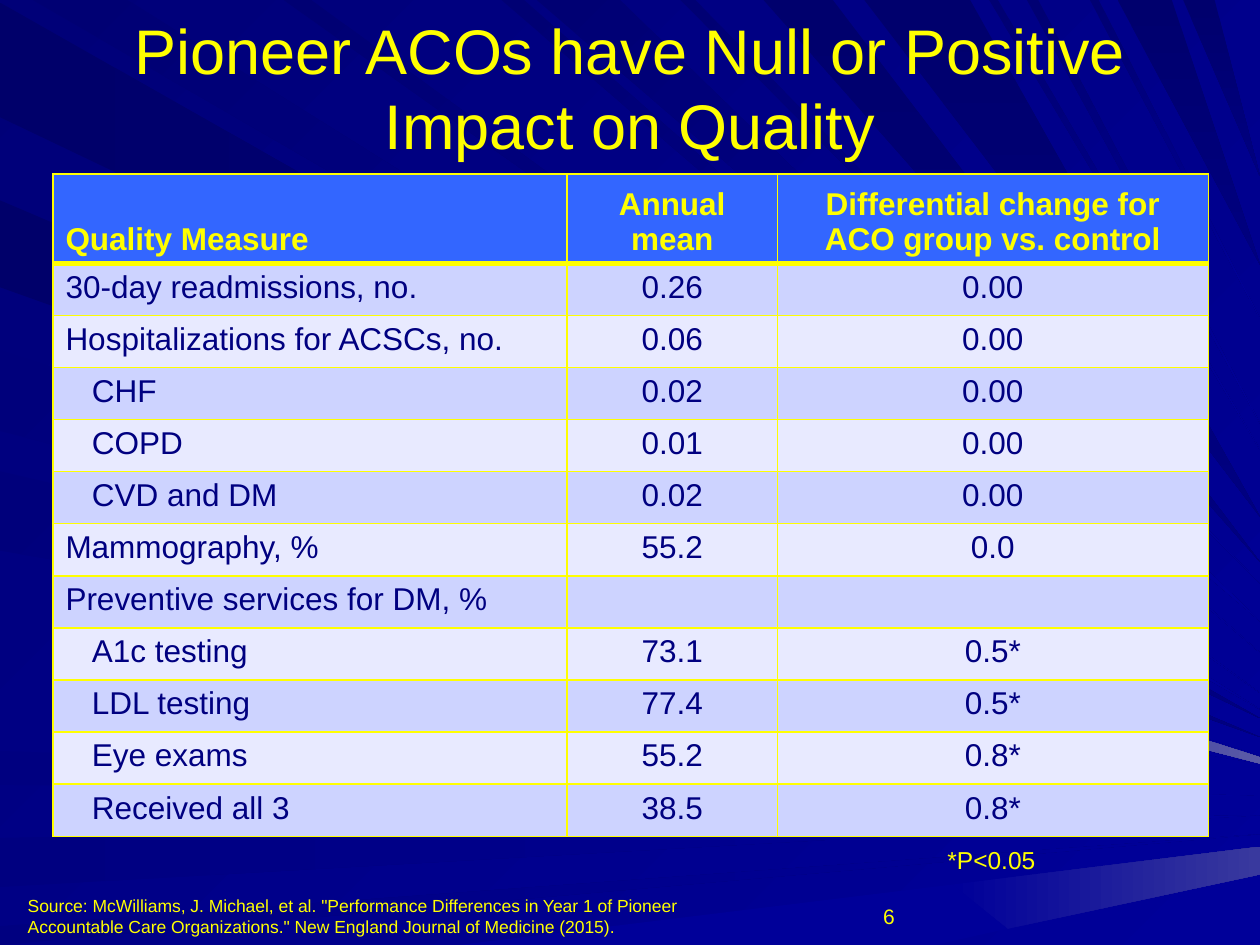
"""Build the slide on Pioneer ACO quality results."""
from lxml import etree
from pptx import Presentation
from pptx.dml.color import RGBColor
from pptx.enum import text
from pptx.oxml import ns
from pptx.util import Inches, Pt

YELLOW, NAVY, HEADER = "FFFF00", "000080", "3366FF"
BANDS = "CDD3FF", "E8EAFF"
WIDTH, HEIGHT = 10, 7.5
LEFT, CENTER, RIGHT = text.PP_ALIGN.LEFT, text.PP_ALIGN.CENTER, text.PP_ALIGN.RIGHT
TOP, MIDDLE, BOTTOM = text.MSO_ANCHOR.TOP, text.MSO_ANCHOR.MIDDLE, text.MSO_ANCHOR.BOTTOM

TITLE = "Pioneer ACOs have Null or Positive Impact on Quality"
SOURCE = ('Source: McWilliams, J. Michael, et al. "Performance Differences in Year 1 of Pioneer '
          'Accountable Care Organizations."\u00a0New England Journal of Medicine\u00a0(2015).')
HEADINGS = "Quality Measure", "Annual mean", "Differential change for ACO group vs. control"
MEASURES = [
    (0, "30-day readmissions, no.", "0.26", "0.00"),
    (0, "Hospitalizations for ACSCs, no.", "0.06", "0.00"),
    (1, "CHF", "0.02", "0.00"),
    (1, "COPD", "0.01", "0.00"),
    (1, "CVD and DM", "0.02", "0.00"),
    (0, "Mammography, %", "55.2", "0.0"),
    (0, "Preventive services for DM, %", "", ""),
    (1, "A1c testing", "73.1", "0.5*"),
    (1, "LDL testing", "77.4", "0.5*"),
    (1, "Eye exams", "55.2", "0.8*"),
    (1, "Received all 3", "38.5", "0.8*"),
]
COLUMNS = 4.08, 1.67, 3.42
TABLE_LEFT, TABLE_TOP, TABLE_HEIGHT, HEAD_HEIGHT = 0.42, 1.38, 5.26, 0.71

RAYS = [
    ("left", "00006A", "000080", 0, [(0.02, 0.93, 5.7), (1.59, 2.28, 5.85)]),
    ("left", "00007B", "000099", 45, [(2.78, 3.42, 6), (3.74, 4.37, 6.06)]),
    ("left", "000080", "000099", 0, [(5.96, 6.23, 6.32), (6.65, 7.04, 6.47), (7.35, 7.5, 6.62)]),
    ("top", "000073", "000099", 45, [(0.26, 1.01, 5.63), (2.25, 2.47, 5.5), (3.98, 4.16, 5.18),
                                     (4.26, 4.92, 4.93), (5.4, 5.52, 4.63), (7.85, 7.92, 3.57),
                                     (8.15, 8.24, 3.36), (8.65, 8.72, 2.53)]),
    ("top", "00006D", "000080", 90, [(6.06, 6.61, 4.46), (6.86, 7.7, 4.1),
                                     (8.87, 9.3, 2.1), (9.39, 9.64, 1.4)]),
]
GLOWS = [
    ("000099", "000099", [(3.64, 7.5), (7.56, 7.02), (8, 7.37), (7.42, 7.5)]),
    ("000099", "39399E", [(7.56, 7.02), (10, 6.72), (10, 6.94), (8, 7.37)]),
    ("000099", "5A5AA6", [(6.37, 4.85), (10, 6.01), (10, 6.06), (6.33, 5.11)]),
]


def rgb(value):
    return RGBColor.from_string(value)


def paint(fill, start, end, angle=0):
    if start == end:
        fill.solid()
        fill.fore_color.rgb = rgb(start)
        return
    fill.gradient()
    fill.gradient_angle = (360 - angle) % 360
    for stop, color in zip(fill.gradient_stops, (start, end)):
        stop.color.rgb = rgb(color)


def style(p, size, color=YELLOW, align=LEFT, bold=False):
    p.alignment = align
    p.font.name, p.font.size, p.font.bold = "Arial", Pt(size), bold
    p.font.color.rgb = rgb(color)


def add_outline(s, points, start, end, angle=0):
    corners = [(Inches(x), Inches(y)) for x, y in points]
    builder = s.shapes.build_freeform(*corners[0], scale=1.0)
    builder.add_line_segments(corners[1:], close=True)
    sp = builder.convert_to_shape()
    sp.shadow.inherit = False
    sp.line.fill.background()
    paint(sp.fill, start, end, angle)


def add_backdrop(s):
    paint(s.background.fill, "000078", "000099", 45)
    for edge, start, end, angle, spans in RAYS:
        for near, far, tip in spans:
            base = [(0, near), (0, far)] if edge == "left" else [(near, 0), (far, 0)]
            add_outline(s, base + [(WIDTH, tip)], start, end, angle)
    for start, end, points in GLOWS:
        add_outline(s, points, start, end)


def add_text(s, box, words, size, align=LEFT, anchor=TOP, bare=False):
    tf = s.shapes.add_textbox(*map(Inches, box)).text_frame
    tf.word_wrap, tf.vertical_anchor = True, anchor
    if bare:
        tf.margin_left = tf.margin_right = tf.margin_top = tf.margin_bottom = 0
    p = tf.paragraphs[0]
    p.text = words
    style(p, size, align=align)
    return p


def add_borders(cell, widths):
    tcPr = cell._tc.get_or_add_tcPr()
    for i, (side, width) in enumerate(widths.items()):
        ln = etree.Element(ns.qn(f"a:ln{side}"), w=str(Pt(width)))
        fill = etree.SubElement(ln, ns.qn("a:solidFill"))
        etree.SubElement(fill, ns.qn("a:srgbClr"), val=YELLOW)
        tcPr.insert(i, ln)


def add_measures(s):
    rows = [(0, *HEADINGS)] + MEASURES
    frame = s.shapes.add_table(len(rows), len(COLUMNS), Inches(TABLE_LEFT), Inches(TABLE_TOP),
                               Inches(sum(COLUMNS)), Inches(TABLE_HEIGHT))
    table = frame.table
    for column, width in zip(table.columns, COLUMNS):
        column.width = Inches(width)
    row_height = (TABLE_HEIGHT - HEAD_HEIGHT) / len(MEASURES)
    for i, (level, *words) in enumerate(rows):
        head = i == 0
        table.rows[i].height = Inches(HEAD_HEIGHT if head else row_height)
        for j, word in enumerate(words):
            cell = table.cell(i, j)
            fill = HEADER if head else BANDS[(i - 1) % 2]
            paint(cell.fill, fill, fill)
            add_borders(cell, {"L": 1, "R": 1, "T": 3 if i == 1 else 1, "B": 3 if head else 1})
            cell.vertical_anchor = BOTTOM if head else TOP
            if level and j == 0:
                cell.margin_left = Inches(0.31)
            p = cell.text_frame.paragraphs[0]
            p.text = word
            style(p, 18, YELLOW if head else NAVY, CENTER if j else LEFT, head)


def main():
    prs = Presentation()
    prs.slide_width, prs.slide_height = Inches(WIDTH), Inches(HEIGHT)
    s = prs.slides.add_slide(prs.slide_layouts[6])
    add_backdrop(s)
    add_measures(s)
    add_text(s, (0.5, 0.17, 9, 1.04), TITLE, 36, CENTER, MIDDLE)
    add_text(s, (7.42, 6.66, 1.42, 0.34), "*P<0.05", 14)
    add_text(s, (4.87, 6.92, 2.33, 0.5), "6", 12, RIGHT, BOTTOM)
    p = add_text(s, (0.1, 7.1, 5.53, 0.34), SOURCE, 10, bare=True)
    p._p.get_or_add_pPr().set("marL", str(Inches(0.12)))
    prs.save("out.pptx")


if __name__ == "__main__":
    main()
